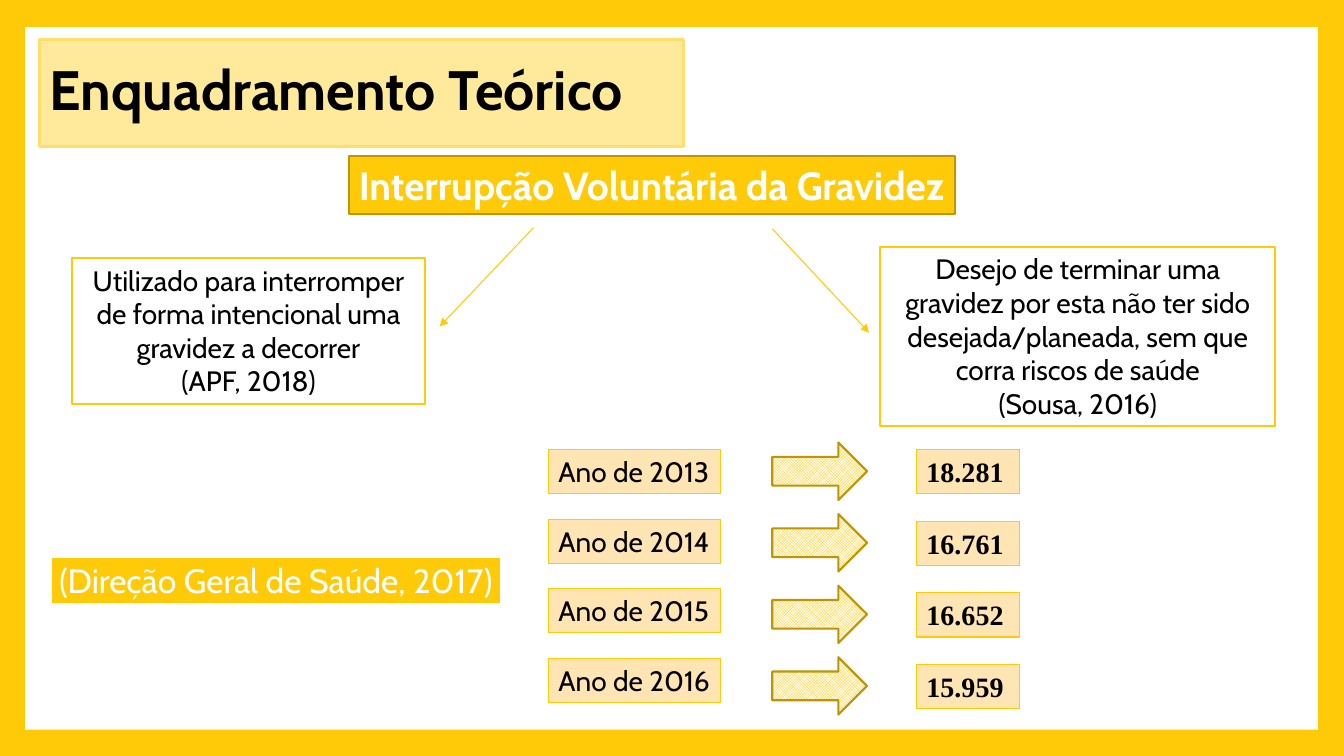
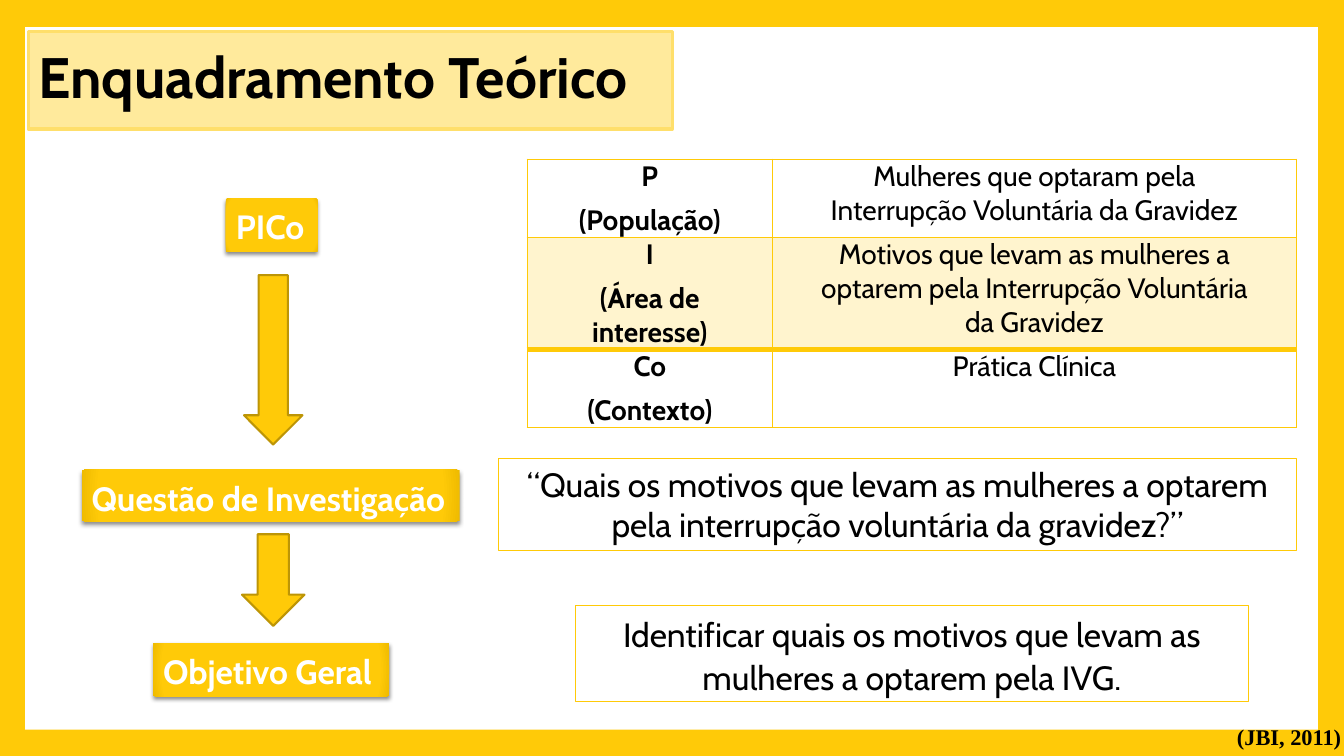
from dataclasses import dataclass

from lxml import etree
from pptx import Presentation
from pptx.dml.color import RGBColor
from pptx.enum.dml import MSO_PATTERN
from pptx.enum.shapes import MSO_CONNECTOR, MSO_SHAPE
from pptx.enum.text import MSO_ANCHOR, PP_ALIGN
from pptx.oxml import parse_xml
from pptx.oxml.ns import nsdecls, qn
from pptx.util import Inches, Pt

RECT, RIGHT_ARROW, DOWN_ARROW = MSO_SHAPE.RECTANGLE, MSO_SHAPE.RIGHT_ARROW, MSO_SHAPE.DOWN_ARROW
LEFT, CENTER = PP_ALIGN.LEFT, PP_ALIGN.CENTER
TOP, MIDDLE = MSO_ANCHOR.TOP, MSO_ANCHOR.MIDDLE
CHECKS = MSO_PATTERN.SMALL_CHECKER_BOARD


@dataclass(frozen=True)
class Theme:
    gold: str = "FFCA08"
    gold_dark: str = "BD9506"
    gold_edge: str = "EFBB00"
    title_fill: str = "FFEA9C"
    title_line: str = "FFDF6B"
    peach: str = "FFE4B4"
    band: str = "FFF4CE"
    white: str = "FFFFFF"
    black: str = "000000"
    font: str = "Cabin"
    serif: str = "Times New Roman"
    heading: int = 28
    large: int = 24
    body: int = 20
    source: int = 16
    hairline: float = 0.75
    outline: float = 1.5


T = Theme()

TITLE = "Enquadramento Teórico"
TOPIC = "Interrupção Voluntária da Gravidez"
DEFINITIONS = [
    ((0.71, 2.56, 3.51, 1.45),
     ["Utilizado para interromper de forma intencional uma gravidez a decorrer", "(APF, 2018)"]),
    ((8.73, 2.45, 3.92, 1.78),
     ["Desejo de terminar uma gravidez por esta não ter sido desejada/planeada, "
      "sem que corra riscos de saúde", "(Sousa, 2016)"]),
]
TOPIC_ARROWS = [(5.29, 2.26, 4.36, 3.24), (7.66, 2.27, 8.62, 3.3)]
DATA_SOURCE = "(Direção Geral de Saúde, 2017)"
CASES = [("2013", "18.281"), ("2014", "16.761"), ("2015", "16.652"), ("2016", "15.959")]

STEPS = [
    ("PICo", (2.24, 1.97, 0.91, 0.53)),
    ("Questão de Investigação", (0.81, 4.66, 3.75, 0.51)),
    ("Objetivo Geral", (1.52, 6.38, 2.34, 0.53)),
]
STEP_ARROWS = [(2.42, 2.73, 0.58, 1.68), (2.4, 5.3, 0.62, 0.91)]
STATEMENTS = [
    ("“Quais os motivos que levam as mulheres a optarem pela interrupção voluntária da gravidez?”",
     (4.94, 4.55, 7.92, 0.91), 1, 0),
    ("Identificar quais os motivos que levam as mulheres a optarem pela IVG.",
     (5.71, 6.01, 6.67, 0.95), 1.07, 8),
]
PICO = [
    ("P", "(População)", "Mulheres que optaram pela Interrupção Voluntária da Gravidez"),
    ("I", "(Área de interesse)",
     "Motivos que levam as mulheres a optarem pela Interrupção Voluntária da Gravidez"),
    ("Co", "(Contexto)", "Prática Clínica"),
]
PICO_COLS = [2.43, 5.2]
PICO_ROWS = [0.77, 1.09, 0.76]
PICO_RULES = [1, 1, 4, 1]
CITATION = "(JBI, 2011)"


def rgb(color):
    return RGBColor.from_string(color)


def write(tf, lines, size, color=T.black, bold=False, font=T.font, align=LEFT,
          spacing=1, after=0, before=0):
    tf.word_wrap = True
    for i, line in enumerate(lines):
        p = tf.paragraphs[0] if i == 0 else tf.add_paragraph()
        p.alignment, p.line_spacing = align, spacing
        p.space_after, p.space_before = Pt(after), Pt(before if i else 0)
        r = p.add_run()
        r.text = line
        f = r.font
        f.name, f.size, f.bold = font, Pt(size), bold
        f.color.rgb = rgb(color)


def add_shape(s, kind, box, fill=None, line=None, width=T.outline):
    sp = s.shapes.add_shape(kind, *map(Inches, box))
    sp.shadow.inherit = False
    if fill:
        sp.fill.solid()
        sp.fill.fore_color.rgb = rgb(fill)
    else:
        sp.fill.background()
    if line:
        sp.line.color.rgb = rgb(line)
        sp.line.width = Pt(width)
    else:
        sp.line.fill.background()
    return sp


def add_box(s, box, lines, size, fill=None, line=None, width=T.outline, anchor=TOP, **style):
    sp = add_shape(s, RECT, box, fill, line, width)
    sp.text_frame.vertical_anchor = anchor
    write(sp.text_frame, lines, size, **style)
    return sp


def add_title(s, box, size):
    add_box(s, box, [TITLE], size, T.title_fill, T.title_line, 2.25, MIDDLE,
            bold=True, spacing=0.9)


def add_arrow_line(s, x1, y1, x2, y2):
    c = s.shapes.add_connector(MSO_CONNECTOR.STRAIGHT, *map(Inches, (x1, y1, x2, y2)))
    c.line.color.rgb = rgb(T.gold)
    c.line.width = Pt(T.hairline)
    etree.SubElement(c.line._get_or_add_ln(), qn("a:tailEnd"), type="triangle")
    etree.SubElement(c._element.spPr, qn("a:effectLst"))


def add_step(s, text, box):
    sp = add_box(s, box, [text], T.large, T.gold, color=T.white, bold=True,
                 spacing=1.07, after=8)
    spPr = sp._element.spPr
    stops = "".join(f'<a:gs pos="{pos}"><a:srgbClr val="{c}"/></a:gs>'
                    for pos, c in ((0, T.gold), (90000, T.gold), (100000, T.gold_edge)))
    gradient = parse_xml(
        f'<a:gradFill {nsdecls("a")}><a:gsLst>{stops}</a:gsLst><a:path path="circle">'
        '<a:fillToRect l="100000" t="100000" r="100000" b="100000"/></a:path></a:gradFill>')
    spPr.replace(spPr.find(qn("a:solidFill")), gradient)
    spPr.find(qn("a:effectLst")).append(parse_xml(
        f'<a:outerShdw {nsdecls("a")} blurRad="{Pt(3)}" dist="{Pt(2)}" dir="5400000">'
        f'<a:srgbClr val="{T.black}"><a:alpha val="45000"/></a:srgbClr></a:outerShdw>'))


def set_borders(cell, top, bottom):
    tcPr = cell._tc.get_or_add_tcPr()
    widths = (("lnL", 1), ("lnR", 1), ("lnT", top), ("lnB", bottom))
    for i, (tag, width) in enumerate(widths):
        tcPr.insert(i, parse_xml(
            f'<a:{tag} {nsdecls("a")} w="{Pt(width)}"><a:solidFill>'
            f'<a:srgbClr val="{T.gold}"/></a:solidFill></a:{tag}>'))


def add_pico_table(s):
    size = (sum(PICO_COLS), sum(PICO_ROWS))
    table = s.shapes.add_table(len(PICO), 2, *map(Inches, (5.23, 1.58, *size))).table
    table.first_row = table.horz_banding = False
    for col, width in zip(table.columns, PICO_COLS):
        col.width = Inches(width)
    for i, (letter, name, meaning) in enumerate(PICO):
        table.rows[i].height = Inches(PICO_ROWS[i])
        for j, lines in enumerate(([letter, name], [meaning])):
            cell = table.cell(i, j)
            cell.margin_left = cell.margin_right = Inches(0.07)
            cell.margin_top = cell.margin_bottom = 0
            cell.fill.solid()
            cell.fill.fore_color.rgb = rgb(T.band if i % 2 else T.white)
            set_borders(cell, PICO_RULES[i], PICO_RULES[i + 1])
            write(cell.text_frame, lines, T.body, bold=j == 0, align=CENTER, before=7)
            for p in cell.text_frame.paragraphs:
                pPr = p._p.get_or_add_pPr()
                for side in ("marL", "marR"):
                    pPr.set(side, str(Inches(0.3)))


def set_up_master(prs, s):
    master = prs.slide_master
    master.background.fill.solid()
    master.background.fill.fore_color.rgb = rgb(T.gold)
    panel = add_shape(s, RECT, (0.25, 0.27, 12.82, 6.97), T.white)
    master.shapes._spTree.insert(2, panel._element)


def build_definition(s):
    add_title(s, (0.39, 0.39, 6.39, 1.06), 39.6)
    add_box(s, (3.46, 1.55, 6.01, 0.57), [TOPIC], T.heading, T.gold, T.gold_dark,
            color=T.white, bold=True)
    for box, lines in DEFINITIONS:
        add_box(s, box, lines, T.body, T.white, T.gold, align=CENTER)
    for ends in TOPIC_ARROWS:
        add_arrow_line(s, *ends)
    add_box(s, (0.49, 5.51, 4.5, 0.5), [DATA_SOURCE], T.large, T.gold, T.white, 4.25,
            color=T.white)
    for i, (year, count) in enumerate(CASES):
        add_box(s, (5.44, 4.46 + 0.69 * i, 1.71, 0.44), [f"Ano de {year}"], T.body,
                T.peach, T.gold, T.hairline)
        add_box(s, (9.09, 4.46 + 0.71 * i, 1.02, 0.44), [count], T.body,
                T.peach, T.gold, T.hairline, font=T.serif, bold=True)
        arrow = add_shape(s, RIGHT_ARROW, (7.66, 4.39 + 0.71 * i, 0.94, 0.57),
                          line=T.gold_dark)
        arrow.fill.patterned()
        arrow.fill.pattern = CHECKS
        arrow.fill.fore_color.rgb = rgb(T.gold)
        arrow.fill.back_color.rgb = rgb(T.white)


def build_question(s):
    add_title(s, (0.28, 0.31, 6.39, 0.97), 40.7)
    for text, box in STEPS:
        add_step(s, text, box)
    for box in STEP_ARROWS:
        add_shape(s, DOWN_ARROW, box, T.gold, T.gold_dark)
    add_pico_table(s)
    for text, box, spacing, after in STATEMENTS:
        add_box(s, box, [text], T.large, line=T.gold, width=T.hairline, align=CENTER,
                spacing=spacing, after=after)
    tf = s.shapes.add_textbox(*map(Inches, (12.17, 7.13, 1.16, 0.37))).text_frame
    tf.margin_right = 0
    write(tf, [CITATION], T.source, bold=True, font=T.serif)


def main():
    prs = Presentation()
    prs.slide_width, prs.slide_height = Inches(13.33), Inches(7.5)
    blank = prs.slide_layouts[6]
    for i, build in enumerate((build_definition, build_question)):
        s = prs.slides.add_slide(blank)
        if i == 0:
            set_up_master(prs, s)
        build(s)
    prs.save("out.pptx")


if __name__ == "__main__":
    main()
